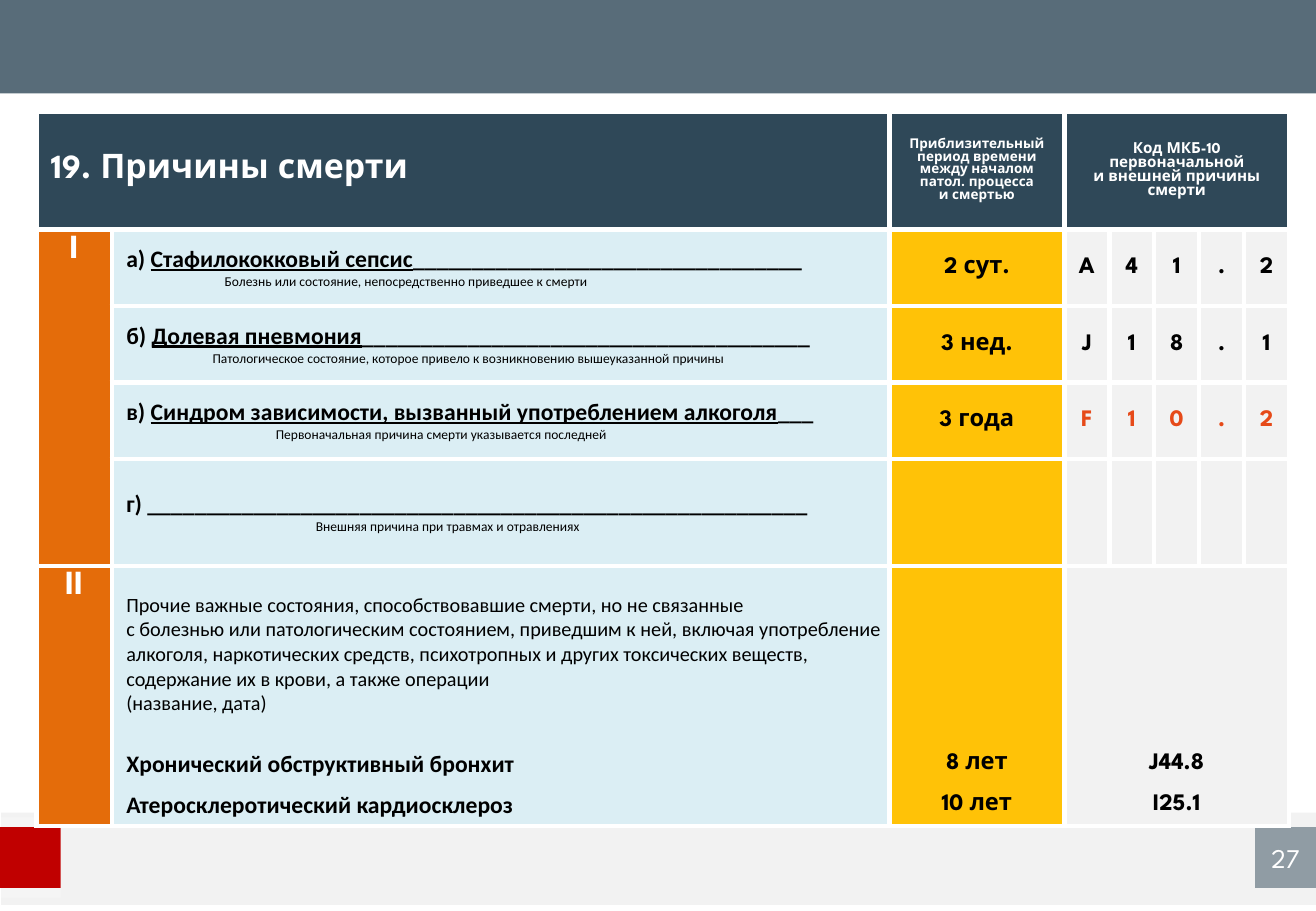
from lxml import etree
from pptx import Presentation
from pptx.dml.color import RGBColor
from pptx.enum.shapes import MSO_SHAPE as SHAPE
from pptx.enum.text import MSO_ANCHOR as ANCHOR, PP_ALIGN as ALIGN
from pptx.oxml.ns import qn
from pptx.util import Inches, Pt

WHITE = RGBColor(0xFF, 0xFF, 0xFF)
BLACK = RGBColor(0x00, 0x00, 0x00)
NAVY = RGBColor(0x2F, 0x48, 0x58)
ORANGE = RGBColor(0xE4, 0x6C, 0x0A)
PALE_BLUE = RGBColor(0xDB, 0xEE, 0xF4)
AMBER = RGBColor(0xFF, 0xC2, 0x07)
GRAY = RGBColor(0xF2, 0xF2, 0xF2)
RED = RGBColor(0xC0, 0x00, 0x00)
ACCENT = RGBColor(0xE6, 0x4A, 0x19)
HEAD_FONT, BODY_FONT = "League Spartan", "Calibri"


def write(cell, lines, size, font=HEAD_FONT, color=BLACK, bold=True, align=ALIGN.CENTER):
    """Fill a cell with paragraphs, one per line."""
    cell.text_frame.text = "\n".join(lines)
    for p in cell.text_frame.paragraphs:
        p.alignment = align
        for r in p.runs:
            style(r, size, font, color, bold)


def style(r, size, font, color, bold):
    r.font.size, r.font.name, r.font.bold = Pt(size), font, bold
    r.font.color.rgb = color


prs = Presentation()
prs.slide_width, prs.slide_height = Inches(10.83), Inches(7.5)
s = prs.slides.add_slide(prs.slide_layouts[6])

# Top band, footer band and footer squares: box, colour, opacity in percent
bands = [
    ((0.01, 6.69, 10.83, 0.76), GRAY, 100),
    ((0, 6.73, 0.5, 0.66), WHITE, 30),
    ((0, 6.81, 0.5, 0.5), RED, 100),
    ((0, 0, 10.84, 0.77), NAVY, 80),
    ((10.33, 6.81, 0.5, 0.5), NAVY, 50),
]
for box, color, opacity in bands:
    sp = s.shapes.add_shape(SHAPE.RECTANGLE, *[Inches(v) for v in box])
    sp.shadow.inherit = False
    sp.line.fill.background()
    sp.fill.solid()
    sp.fill.fore_color.rgb = color
    if opacity < 100:
        clr = sp.fill._xPr.find(qn("a:solidFill"))[0]
        etree.SubElement(clr, qn("a:alpha")).set("val", str(opacity * 1000))

# Slide number in the last square
tf = sp.text_frame
tf.margin_left = tf.margin_right = 0
tf.vertical_anchor = ANCHOR.MIDDLE
tf.text = "27"
p = tf.paragraphs[0]
p.alignment = ALIGN.CENTER
style(p.runs[0], 16, HEAD_FONT, WHITE, False)

# Table grid
col_widths = [0.62, 6.4, 1.44] + [0.37] * 5
row_heights = [0.97, 0.63, 0.63, 0.63, 0.88, 1.46, 0.34, 0.34]
tbl = s.shapes.add_table(8, 8, Inches(0.3), Inches(0.92), Inches(10.32), Inches(5.89)).table
tbl.first_row = tbl.horz_banding = False
for col, width in zip(tbl.columns, col_widths):
    col.width = Inches(width)
for row, height in zip(tbl.rows, row_heights):
    row.height = Inches(height)

# Fills, margins and white borders; part II has no inner horizontal lines
col_fills = [ORANGE, PALE_BLUE, AMBER] + [GRAY] * 5
for i in range(8):
    for j in range(8):
        cell = tbl.cell(i, j)
        cell.fill.solid()
        cell.fill.fore_color.rgb = NAVY if i == 0 else col_fills[j]
        wide = j >= 2 and i in (0, 6, 7)
        label = j == 0 and i > 0
        cell.margin_left = Inches(0.16 if wide else 0.05 if label or j > 1 else 0.12)
        cell.margin_right = Inches(0.16 if wide else 0.05)
        cell.margin_top = Inches(0.04 if label else 0)
        cell.margin_bottom = 0
        cell.vertical_anchor = ANCHOR.TOP if label else ANCHOR.MIDDLE
        hidden = {"T": j > 0 and i in (6, 7), "B": j > 0 and i in (5, 6)}
        for k, side in enumerate("LRTB"):
            ln = etree.Element(qn("a:ln" + side), w=str(Pt(3)))
            if hidden.get(side):
                etree.SubElement(ln, qn("a:noFill"))
            else:
                fill = etree.SubElement(ln, qn("a:solidFill"))
                etree.SubElement(fill, qn("a:srgbClr"), val=str(WHITE))
            cell._tc.get_or_add_tcPr().insert(k, ln)

# Merged cells: first row, first column, last row, last column
merges = [(0, 0, 0, 1), (0, 3, 0, 7), (1, 0, 4, 0), (5, 0, 7, 0)]
merges += [(i, 3, i, 7) for i in (5, 6, 7)]
for top, left, bottom, right in merges:
    tbl.cell(top, left).merge(tbl.cell(bottom, right))

# Header row and part numbers
write(tbl.cell(0, 0), ["19. Причины смерти"], 20, color=WHITE, align=ALIGN.LEFT)
write(tbl.cell(0, 2), ["Приблизительный период времени между началом патол. процесса",
                       "и смертью"], 8, color=WHITE)
write(tbl.cell(0, 3), ["Код МКБ-10", "первоначальной", "и внешней причины смерти"],
      9, color=WHITE)
write(tbl.cell(1, 0), ["I"], 20, color=WHITE)
write(tbl.cell(5, 0), ["II"], 20, color=WHITE)

# Part I: letter, cause, blank length, caption, caption indent, period, code, code colour
causes = [
    ("а) ", "Стафилококковый сепсис", 33,
     "Болезнь или состояние, непосредственно приведшее к смерти", 0.81,
     "2 сут.", "A41.2", BLACK),
    ("б) ", "Долевая пневмония", 38,
     "Патологическое состояние, которое привело к возникновению вышеуказанной причины", 0.71,
     "3 нед.", "J18.1", BLACK),
    ("в) ", "Синдром зависимости, вызванный употреблением алкоголя", 3,
     "Первоначальная причина смерти указывается последней", 1.23,
     "3 года", "F10.2", ACCENT),
    ("г) ", "", 56,
     "Внешняя причина при травмах и отравлениях", 1.56,
     "", "", BLACK),
]
for i, (letter, cause, blanks, caption, indent, period, code, color) in enumerate(causes, 1):
    tf = tbl.cell(i, 1).text_frame
    p = tf.paragraphs[0]
    for text in (letter, cause, "_" * blanks):
        if text:
            r = p.add_run()
            r.text = text
            style(r, 14, BODY_FONT, BLACK, True)
            r.font.underline = text == cause
    p = tf.add_paragraph()
    p.text = caption
    p._p.get_or_add_pPr().set("marL", str(Inches(indent)))
    style(p.runs[0], 8, BODY_FONT, BLACK, False)
    if period:
        write(tbl.cell(i, 2), [period], 14)
    for j, char in enumerate(code, 3):
        write(tbl.cell(i, j), [char], 14, color=color)

# Part II: other conditions
write(tbl.cell(5, 1), [
    "Прочие важные состояния, способствовавшие смерти, но не связанные",
    "с болезнью или патологическим состоянием, приведшим к ней, включая употребление "
    "алкоголя, наркотических средств, психотропных и других токсических веществ, "
    "содержание их в крови, а также операции",
    "(название, дата)"], 12, BODY_FONT, bold=False, align=ALIGN.LEFT)
others = [("Хронический обструктивный бронхит", "8 лет", "J44.8"),
          ("Атеросклеротический кардиосклероз", "10 лет", "I25.1")]
for i, (condition, period, code) in enumerate(others, 6):
    write(tbl.cell(i, 1), [condition], 14, BODY_FONT, align=ALIGN.LEFT)
    write(tbl.cell(i, 2), [period], 14)
    write(tbl.cell(i, 3), [code], 14)

prs.save("out.pptx")
